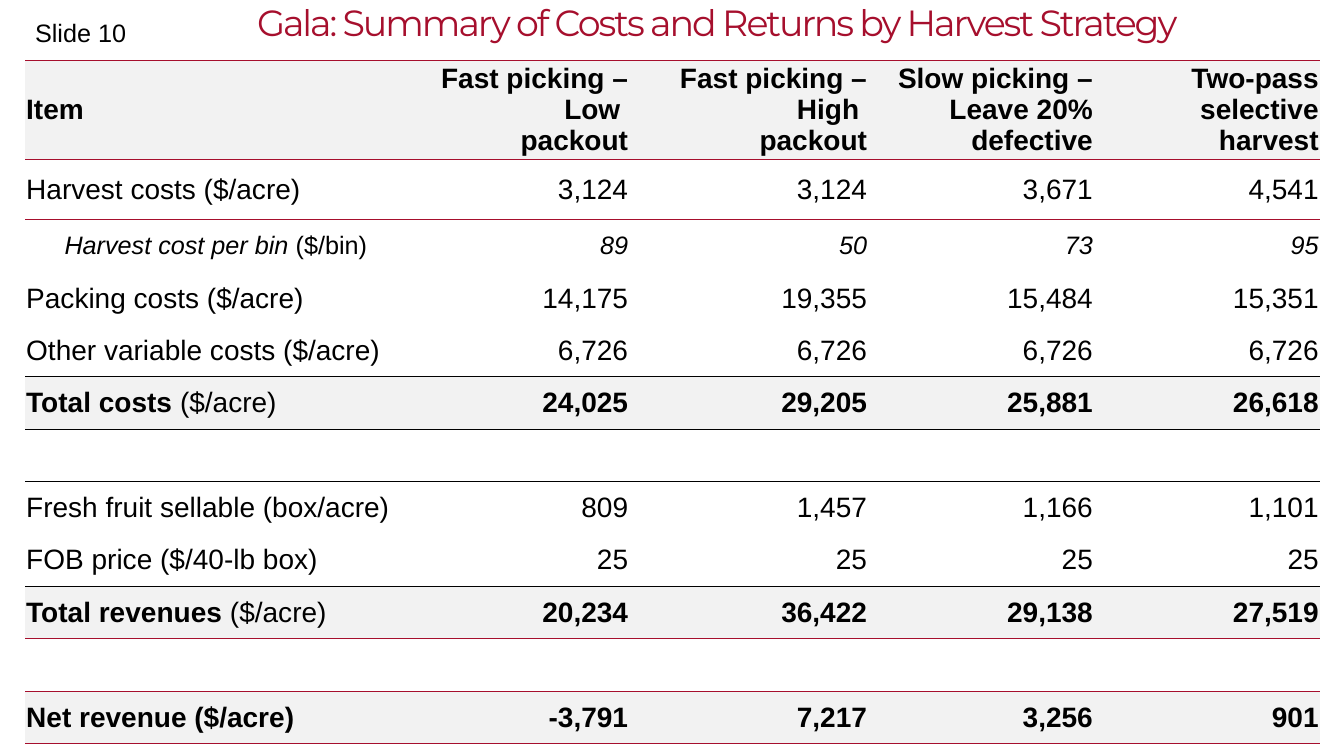
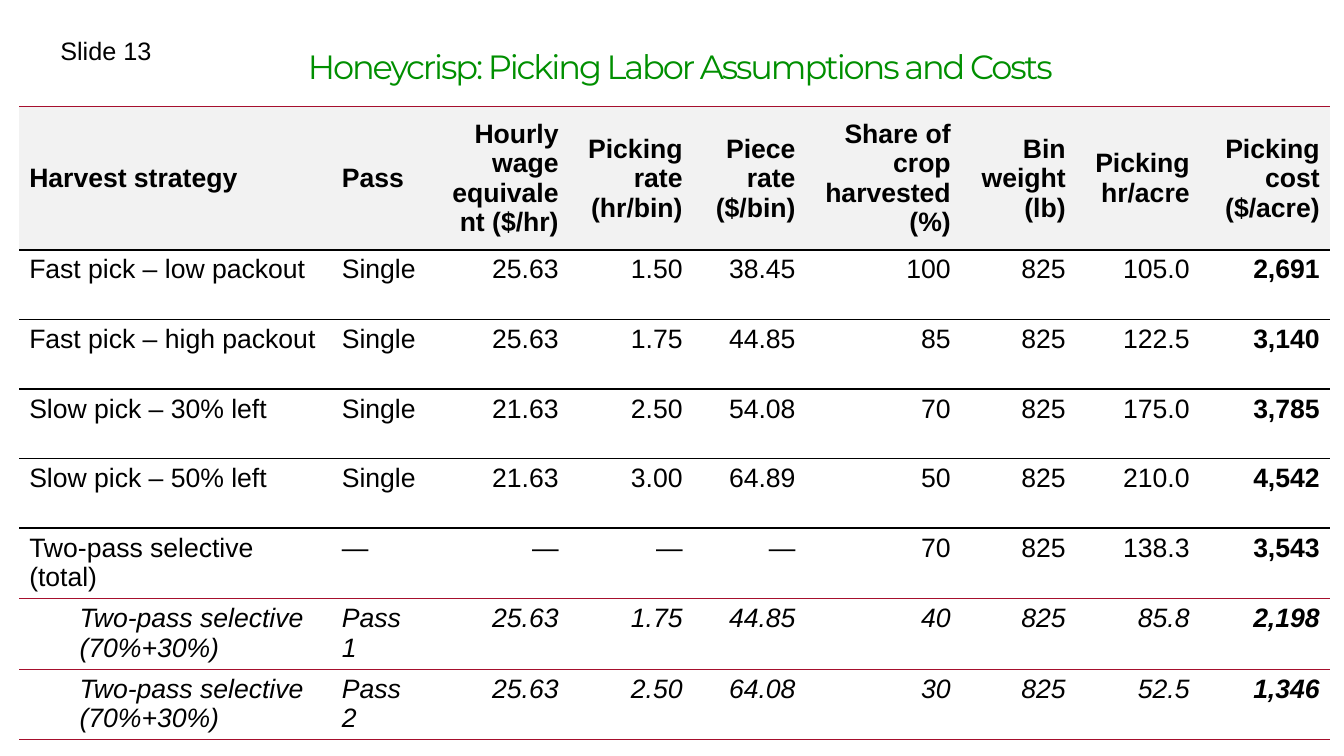
from lxml.etree import SubElement
from pptx import Presentation
from pptx.dml.color import RGBColor
from pptx.enum.text import MSO_ANCHOR, MSO_AUTO_SIZE, PP_ALIGN
from pptx.oxml.ns import qn
from pptx.util import Inches, Pt

# Shared look
CRIMSON, GREEN, BLACK, BAND = "A60F2D", "008F00", "000000", "F2F2F2"
BODY_FONT, TITLE_FONT = "Arial", "Montserrat"
NO_STYLE = "{2D5ABB26-0587-4C30-8999-92F81FD0307C}"


def color(value):
    return RGBColor.from_string(value)


def add_run(paragraph, text, size, font=BODY_FONT, ink=BLACK, style=""):
    """Style holds b for bold and i for italic."""
    run = paragraph.add_run()
    run.text = text
    run.font.size, run.font.name = Pt(size), font
    run.font.color.rgb = color(ink)
    run.font.bold, run.font.italic = "b" in style, "i" in style
    return run


# Each row is (cells, style); in a cell, text after "|" is plain
gala_rows = [
    (["Item", "Fast picking – Low \npackout", "Fast picking – High \npackout",
      "Slow picking – Leave 20% defective", "Two-pass selective harvest"], "b"),
    (["Harvest costs ($/acre)", "3,124", "3,124", "3,671", "4,541"], ""),
    (["Harvest cost per bin| ($/bin)", "89", "50", "73", "95"], "i"),
    (["Packing costs ($/acre)", "14,175", "19,355", "15,484", "15,351"], ""),
    (["Other variable costs ($/acre)"] + ["6,726"] * 4, ""),
    (["Total costs| ($/acre)", "24,025", "29,205", "25,881", "26,618"], "b"),
    ([""] * 5, ""),
    (["Fresh fruit sellable (box/acre)", "809", "1,457", "1,166", "1,101"], ""),
    (["FOB price ($/40-lb box)"] + ["25"] * 4, ""),
    (["Total revenues| ($/acre)", "20,234", "36,422", "29,138", "27,519"], "b"),
    ([""] * 5, ""),
    (["Net revenue ($/acre)", "-3,791", "7,217", "3,256", "901"], "b"),
]
honeycrisp_rows = [
    (["Harvest strategy", "Pass", "Hourly wage equivalent ($/hr)",
      "Picking rate (hr/bin)", "Piece rate ($/bin)",
      "Share of crop harvested (%)", "Bin weight (lb)", "Picking hr/acre",
      "Picking cost ($/acre)"], "b"),
    (["Fast pick – low packout", "Single", "25.63", "1.50", "38.45",
      "100", "825", "105.0", "2,691"], ""),
    (["Fast pick – high packout", "Single", "25.63", "1.75", "44.85",
      "85", "825", "122.5", "3,140"], ""),
    (["Slow pick – 30% left", "Single", "21.63", "2.50", "54.08",
      "70", "825", "175.0", "3,785"], ""),
    (["Slow pick – 50% left", "Single", "21.63", "3.00", "64.89",
      "50", "825", "210.0", "4,542"], ""),
    (["Two-pass selective (total)", "—", "—", "—", "—",
      "70", "825", "138.3", "3,543"], ""),
    (["Two-pass selective (70%+30%)", "Pass 1", "25.63", "1.75", "44.85",
      "40", "825", "85.8", "2,198"], "i"),
    (["Two-pass selective (70%+30%)", "Pass 2", "25.63", "2.50", "64.08",
      "30", "825", "52.5", "1,346"], "i"),
]

# Rules map the edge above a row number to a line colour
slides = [
    dict(title="Gala: Summary of Costs and Returns by Harvest Strategy",
         title_at=(0.71, 0.05), title_size=26, title_color=CRIMSON,
         label="Slide 10", label_box=(0.25, 0.12, 1.34, 0.4), label_wrap=True,
         rows=gala_rows, table_at=(0.25, 0.6), size=20, italic_size=18,
         widths=[3.88, 2.11, 2.37, 2.24, 2.24],
         heights=[0.98, 0.6] + [0.52] * 10,
         margins=(0.01, 0.01), indent=(0, 0.38), level=0, left_columns=1,
         middle_rows=range(12), bold_column=None,
         rules={0: CRIMSON, 1: CRIMSON, 5: BLACK, 6: BLACK, 9: BLACK,
                10: CRIMSON, 11: CRIMSON, 12: CRIMSON}),
    dict(title="Honeycrisp: Picking Labor Assumptions and Costs",
         title_at=(0.34, 0.5), title_size=24, title_color=GREEN,
         label="Slide 13", label_box=(0.5, 0.3, 9, 1), label_wrap=False,
         rows=honeycrisp_rows, table_at=(0.19, 1.06), size=19, italic_size=19,
         widths=[3.1, 0.96, 1.39, 1.23, 1.12, 1.54, 1.14, 1.23, 1.29],
         heights=[1.42] + [0.69] * 4 + [0.7] * 3,
         margins=(0.1, 0.05), indent=(0.5, 0), level=1, left_columns=2,
         middle_rows=range(1), bold_column=8,
         rules={0: CRIMSON, **dict.fromkeys(range(1, 6), BLACK),
                **dict.fromkeys(range(6, 9), CRIMSON)}),
]

presentation = Presentation()
presentation.slide_width, presentation.slide_height = Inches(13.33), Inches(7.5)

for content in slides:
    slide = presentation.slides.add_slide(presentation.slide_layouts[5])

    # Title
    title = slide.shapes.title
    title.left, title.top = [Inches(value) for value in content["title_at"]]
    title.width, title.height = Inches(12.81), Inches(0.55)
    frame = title.text_frame
    frame.margin_left = frame.margin_right = 0
    frame.margin_top = frame.margin_bottom = 0
    frame.word_wrap = True
    frame.auto_size = MSO_AUTO_SIZE.NONE
    frame.vertical_anchor = MSO_ANCHOR.TOP
    paragraph = frame.paragraphs[0]
    paragraph.alignment, paragraph.line_spacing = PP_ALIGN.CENTER, 0.9
    run = add_run(paragraph, content["title"], content["title_size"],
                  TITLE_FONT, content["title_color"])
    run.font._element.set("spc", "-150")

    # Table
    rows, widths, heights = content["rows"], content["widths"], content["heights"]
    left, top = content["table_at"]
    shape = slide.shapes.add_table(
        len(rows), len(widths), Inches(left), Inches(top),
        Inches(sum(widths)), Inches(sum(heights)))
    table = shape.table
    table.horz_banding = table.first_row = False
    shape._element.find(".//" + qn("a:tableStyleId")).text = NO_STYLE
    for column, width in zip(table.columns, widths):
        column.width = Inches(width)
    for row, height in zip(table.rows, heights):
        row.height = Inches(height)

    side, edge = [Inches(value) for value in content["margins"]]
    for row_index, (texts, row_style) in enumerate(rows):
        size = content["italic_size"] if row_style == "i" else content["size"]
        for column_index, text in enumerate(texts):
            cell = table.cell(row_index, column_index)
            cell.margin_left = cell.margin_right = side
            cell.margin_top = cell.margin_bottom = edge
            if row_index in content["middle_rows"]:
                cell.vertical_anchor = MSO_ANCHOR.MIDDLE

            # Lines above and below, then the band
            properties = cell._tc.get_or_add_tcPr()
            for tag, rule in (("a:lnT", row_index), ("a:lnB", row_index + 1)):
                if rule in content["rules"]:
                    line = SubElement(properties, qn(tag), w=str(Pt(1)))
                    fill = SubElement(line, qn("a:solidFill"))
                    SubElement(fill, qn("a:srgbClr"), val=content["rules"][rule])
            if row_style == "b":
                cell.fill.solid()
                cell.fill.fore_color.rgb = color(BAND)
            else:
                cell.fill.background()

            # Text
            style = row_style
            if column_index == content["bold_column"]:
                style += "b"
            for line_index, line_text in enumerate(text.split("\n")):
                frame = cell.text_frame
                paragraph = frame.add_paragraph() if line_index else frame.paragraphs[0]
                if column_index >= content["left_columns"]:
                    paragraph.alignment = PP_ALIGN.RIGHT
                elif column_index == 0 and row_style == "i":
                    paragraph.level = content["level"]
                    margin, indent = content["indent"]
                    paragraph_properties = paragraph._p.get_or_add_pPr()
                    paragraph_properties.set("marL", str(Inches(margin)))
                    paragraph_properties.set("indent", str(Inches(indent)))
                main, _, plain = line_text.partition("|")
                if main:
                    add_run(paragraph, main, size, style=style)
                if plain:
                    add_run(paragraph, plain, size)

    # Slide label
    label = slide.shapes.add_textbox(*[Inches(value) for value in content["label_box"]])
    label.text_frame.word_wrap = content["label_wrap"]
    label.text_frame.auto_size = MSO_AUTO_SIZE.SHAPE_TO_FIT_TEXT
    add_run(label.text_frame.paragraphs[0], content["label"], 18)

presentation.save("out.pptx")
